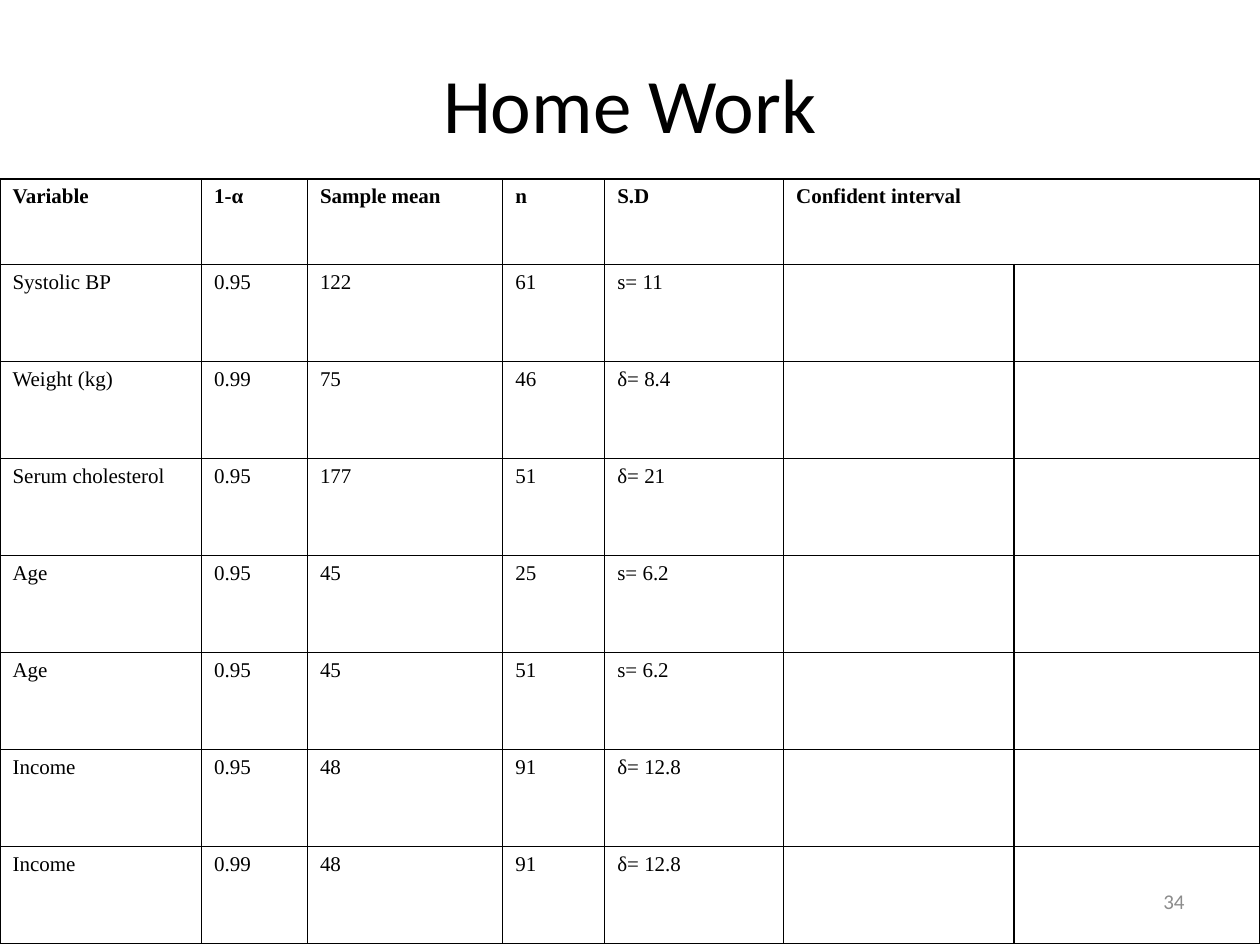
from dataclasses import dataclass

from lxml.etree import SubElement
from pptx import Presentation
from pptx.dml.color import RGBColor
from pptx.enum.text import MSO_ANCHOR, PP_ALIGN
from pptx.oxml.ns import qn
from pptx.util import Inches, Pt


@dataclass(frozen=True)
class Theme:
    ink: str = "000000"
    muted: str = "8C8C8C"
    heading_font: str = "Calibri"
    table_font: str = "Times New Roman"
    title_size: int = 44
    small_size: int = 12
    border_width: int = 1
    hanging_indent: float = 0.38


HEADERS = ["Variable", "1-α", "Sample mean", "n", "S.D", "Confident interval"]
EXERCISES = [
    ["Systolic BP", "0.95", "122", "61", "s= 11"],
    ["Weight (kg)", "0.99", "75", "46", "δ= 8.4"],
    ["Serum cholesterol", "0.95", "177", "51", "δ= 21"],
    ["Age", "0.95", "45", "25", "s= 6.2"],
    ["Age", "0.95", "45", "51", "s= 6.2"],
    ["Income", "0.95", "48", "91", "δ= 12.8"],
    ["Income", "0.99", "48", "91", "δ= 12.8"],
]
COLUMN_WIDTHS = [1.6, 0.84, 1.55, 0.81, 1.42, 1.83, 1.95]
HEADER_HEIGHT, ROW_HEIGHT = 0.68, 0.77


class SlideBuilder:
    def __init__(self, slide, theme):
        self.slide = slide
        self.theme = theme

    def style(self, paragraph, font, size, color, bold=False):
        for span in paragraph.runs:
            span.font.name = font
            span.font.size = Pt(size)
            span.font.bold = bold
            span.font.color.rgb = RGBColor.from_string(color)

    def text(self, text, left, top, width, height, size, color, align):
        box = self.slide.shapes.add_textbox(
            Inches(left), Inches(top), Inches(width), Inches(height))
        frame = box.text_frame
        frame.word_wrap = True
        frame.vertical_anchor = MSO_ANCHOR.MIDDLE
        frame.text = text
        para = frame.paragraphs[0]
        para.alignment = align
        self.style(para, self.theme.heading_font, size, color)

    def borders(self, cell):
        properties = cell._tc.get_or_add_tcPr()
        for side in ("a:lnL", "a:lnR", "a:lnT", "a:lnB"):
            line = SubElement(properties, qn(side),
                              w=str(Pt(self.theme.border_width)))
            fill = SubElement(line, qn("a:solidFill"))
            SubElement(fill, qn("a:srgbClr"), val=self.theme.ink)

    def cell(self, cell, text, bold):
        self.borders(cell)
        cell.fill.background()
        cell.text = text
        para = cell.text_frame.paragraphs[0]
        indent = Inches(self.theme.hanging_indent)
        properties = para._p.get_or_add_pPr()
        properties.set("marL", str(indent))
        properties.set("indent", str(-indent))
        self.style(para, self.theme.table_font, self.theme.small_size,
                   self.theme.ink, bold)

    def table(self, rows, left, top, widths, heights):
        table = self.slide.shapes.add_table(
            len(rows), len(widths), Inches(left), Inches(top),
            Inches(sum(widths)), Inches(sum(heights))).table
        table.first_row = table.horz_banding = False
        for column, width in zip(table.columns, widths):
            column.width = Inches(width)
        for row, height in zip(table.rows, heights):
            row.height = Inches(height)
        for r, values in enumerate(rows):
            # Short rows are filled up with empty answer cells
            padded = values + [""] * (len(widths) - len(values))
            for c, value in enumerate(padded):
                self.cell(table.cell(r, c), value, bold=r == 0)
        return table


def main():
    deck = Presentation()
    deck.slide_width, deck.slide_height = Inches(10), Inches(7.5)
    theme = Theme()
    page = SlideBuilder(deck.slides.add_slide(deck.slide_layouts[6]), theme)

    # Title
    page.text("Home Work", 0.5, 0.3, 9, 1.03,
              theme.title_size, theme.ink, PP_ALIGN.CENTER)

    # Exercise table, with the interval heading over both limits
    heights = [HEADER_HEIGHT] + [ROW_HEIGHT] * len(EXERCISES)
    table = page.table([HEADERS] + EXERCISES, 0, 1.42, COLUMN_WIDTHS, heights)
    table.cell(0, 5).merge(table.cell(0, 6))

    # Page number
    page.text("34", 7.17, 6.95, 2.33, 0.4,
              theme.small_size, theme.muted, PP_ALIGN.RIGHT)

    deck.save("out.pptx")


if __name__ == "__main__":
    main()
